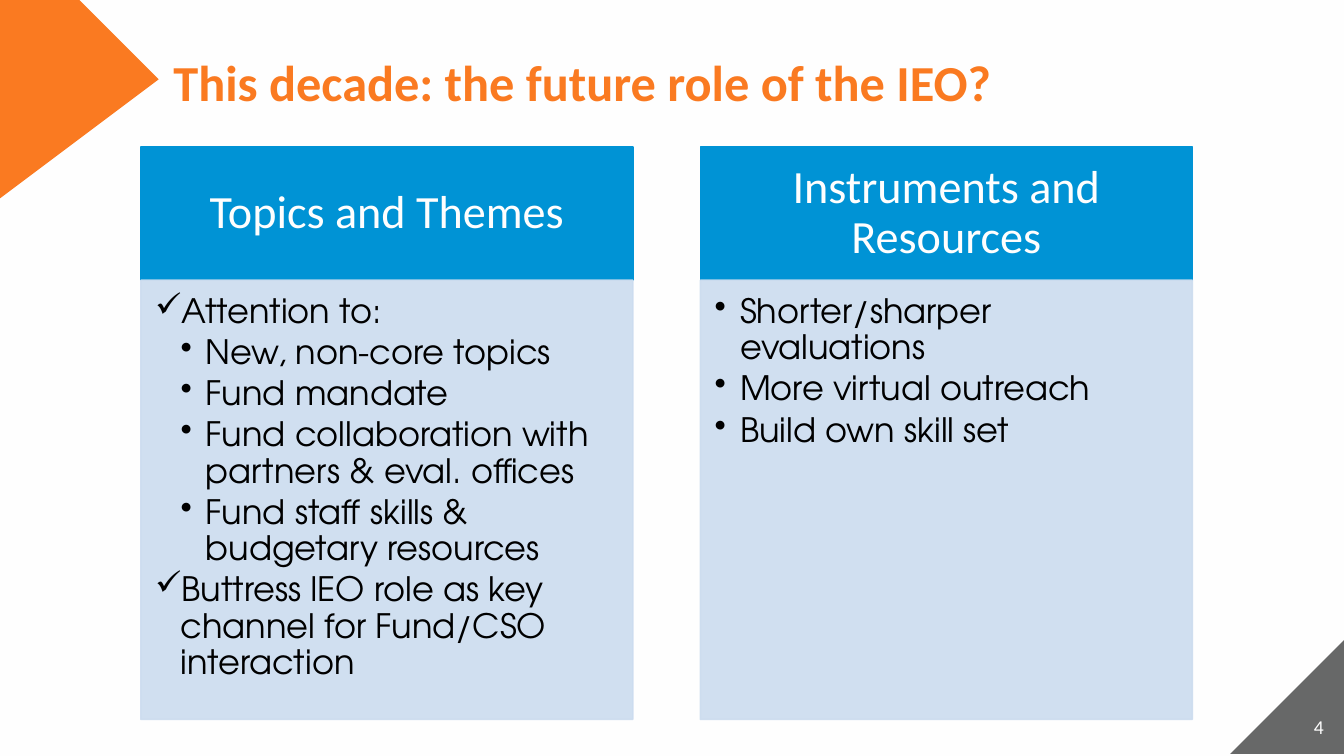
from lxml.etree import SubElement
from pptx import Presentation
from pptx.dml.color import RGBColor
from pptx.enum.shapes import MSO_SHAPE as Shape
from pptx.enum.text import MSO_ANCHOR as Anchor, MSO_AUTO_SIZE as AutoSize, PP_ALIGN as Align
from pptx.oxml.ns import qn
from pptx.util import Cm, Pt

ORANGE, GRAY, BLUE, PALE = "FA7A21", "676868", "0093D5", "CCDCEF"
WHITE, BLACK = "FEFEFE", "000000"
WIDTH, HEIGHT = 33.87, 19.05
HANG = 0.64

TITLE = dict(name="Calibri", size=Pt(36), bold=True)
HEADING = dict(name="Calibri", size=Pt(33))
BODY = dict(name="TeX Gyre Adventor", size=Pt(24))
NUMBER = dict(name="Calibri", size=Pt(14))

# Each item is (level, bullet, text).
COLUMNS = [
    ("Topics and Themes", [
        (1, "✓", "Attention to:"),
        (2, "•", "New, non-core topics"),
        (2, "•", "Fund mandate"),
        (2, "•", "Fund collaboration with partners & eval. offices"),
        (2, "•", "Fund staff skills & budgetary resources"),
        (1, "✓", "Buttress IEO role as key channel for Fund/CSO interaction"),
    ]),
    ("Instruments and Resources", [
        (1, "•", "Shorter/sharper evaluations"),
        (1, "•", "More virtual outreach"),
        (1, "•", "Build own skill set"),
    ]),
]


def paint(target, color):
    """Give a fill one solid colour."""
    target.solid()
    target.fore_color.rgb = RGBColor.from_string(color)


def set_values(target, values):
    for name, value in values.items():
        setattr(target, name, value)


def format_para(para, text, font, color, **values):
    para.text = text
    set_values(para, values)
    set_values(para.font, font)
    paint(para.font.fill, color)


def set_frame(frame, anchor, left, top, right, bottom):
    """Set wrapping, anchor and insets in centimetres."""
    set_values(frame, dict(
        word_wrap=True, auto_size=AutoSize.NONE, vertical_anchor=anchor,
        margin_left=Cm(left), margin_top=Cm(top),
        margin_right=Cm(right), margin_bottom=Cm(bottom)))


def add_bullet(para, level, bullet):
    props = para._p.get_or_add_pPr()
    props.set("marL", str(Cm(HANG * level)))
    props.set("indent", str(-Cm(HANG)))
    SubElement(props, qn("a:buChar"), char=bullet)


def add_panel(slide, box, color):
    panel = slide.shapes.add_shape(Shape.RECTANGLE, *map(Cm, box))
    panel.shadow.inherit = False
    paint(panel.fill, color)
    paint(panel.line.fill, color)
    panel.line.width = Pt(1)
    return panel


def add_corner(slide, points, color):
    start, *others = points
    builder = slide.shapes.build_freeform(*start, scale=Cm(1))
    builder.add_line_segments(others, close=True)
    corner = builder.convert_to_shape()
    corner.shadow.inherit = False
    paint(corner.fill, color)
    corner.line.fill.background()


def add_title(slide, box, text):
    title = slide.shapes.title
    set_values(title, dict(zip(("left", "top", "width", "height"), map(Cm, box))))
    set_frame(title.text_frame, Anchor.BOTTOM, 0, 0.13, 0.25, 0.13)
    format_para(title.text_frame.paragraphs[0], text, TITLE, ORANGE,
                alignment=Align.LEFT, line_spacing=0.9)


def add_page_number(slide, box, text):
    frame = slide.shapes.add_textbox(*map(Cm, box)).text_frame
    set_frame(frame, Anchor.TOP, 0.25, 0.13, 0.25, 0.13)
    format_para(frame.paragraphs[0], text, NUMBER, WHITE, alignment=Align.RIGHT)


def add_heading(slide, box, text):
    frame = add_panel(slide, box, BLUE).text_frame
    set_frame(frame, Anchor.MIDDLE, 0.66, 0.38, 0.66, 0.38)
    format_para(frame.paragraphs[0], text, HEADING, WHITE,
                alignment=Align.CENTER, line_spacing=0.9)


def add_list(slide, box, items):
    panel = add_panel(slide, box, PALE)
    for color in panel._element.spPr.iter(qn("a:srgbClr")):
        SubElement(color, qn("a:alpha"), val="90000")
    frame = panel.text_frame
    set_frame(frame, Anchor.TOP, 0.36, 0.36, 0.48, 0.53)
    for index, (level, bullet, text) in enumerate(items):
        para = frame.add_paragraph() if index else frame.paragraphs[0]
        add_bullet(para, level, bullet)
        format_para(para, text, BODY, BLACK, alignment=Align.LEFT,
                    line_spacing=0.9, space_after=Pt(3.5))


def add_columns(slide, box, columns, gap=1.7, heading_height=3.35):
    """Share the box among equal columns, each a heading above a list."""
    left, top, width, height = box
    column_width = (width - gap * (len(columns) - 1)) / len(columns)
    for index, (heading, items) in enumerate(columns):
        x = left + index * (column_width + gap)
        add_heading(slide, (x, top, column_width, heading_height), heading)
        add_list(slide, (x, top + heading_height, column_width,
                         height - heading_height), items)


def main():
    deck = Presentation()
    deck.slide_width, deck.slide_height = Cm(WIDTH), Cm(HEIGHT)
    slide = deck.slides.add_slide(deck.slide_layouts[5])
    paint(slide.background.fill, WHITE)
    add_corner(slide, [(WIDTH, 16.43), (WIDTH, HEIGHT), (30.84, HEIGHT)], GRAY)
    add_corner(slide, [(0, 0), (1.82, 0), (3.78, 1.68), (0, 4.95)], ORANGE)
    add_page_number(slide, (31.78, 17.88, 1.83, 0.86), "4")
    add_title(slide, (4.37, 0.86, 26.49, 2.11),
              "This decade: the future role of the IEO?")
    add_columns(slide, (3.55, 3.71, 26.5, 14.42), COLUMNS)
    deck.save("out.pptx")


if __name__ == "__main__":
    main()
